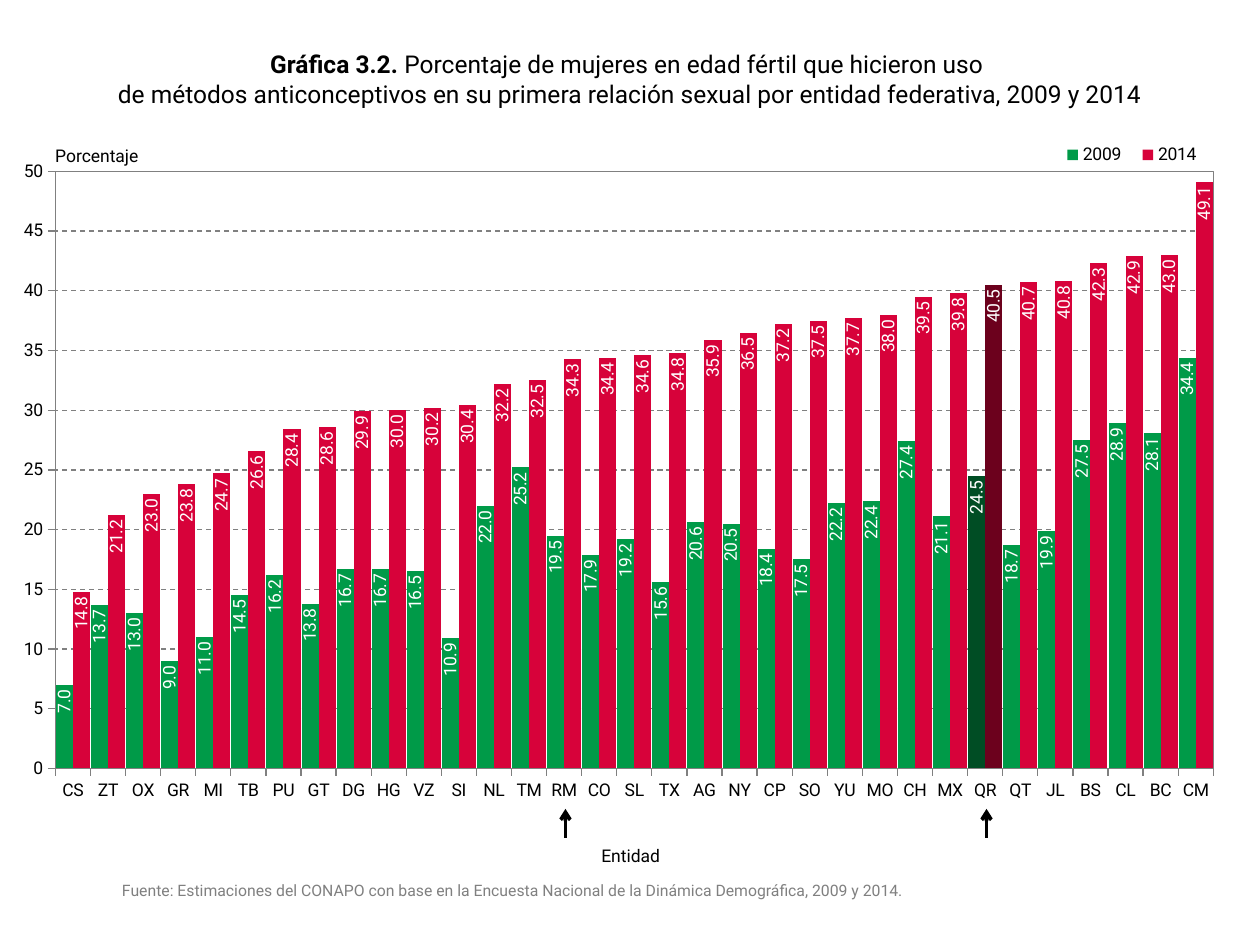
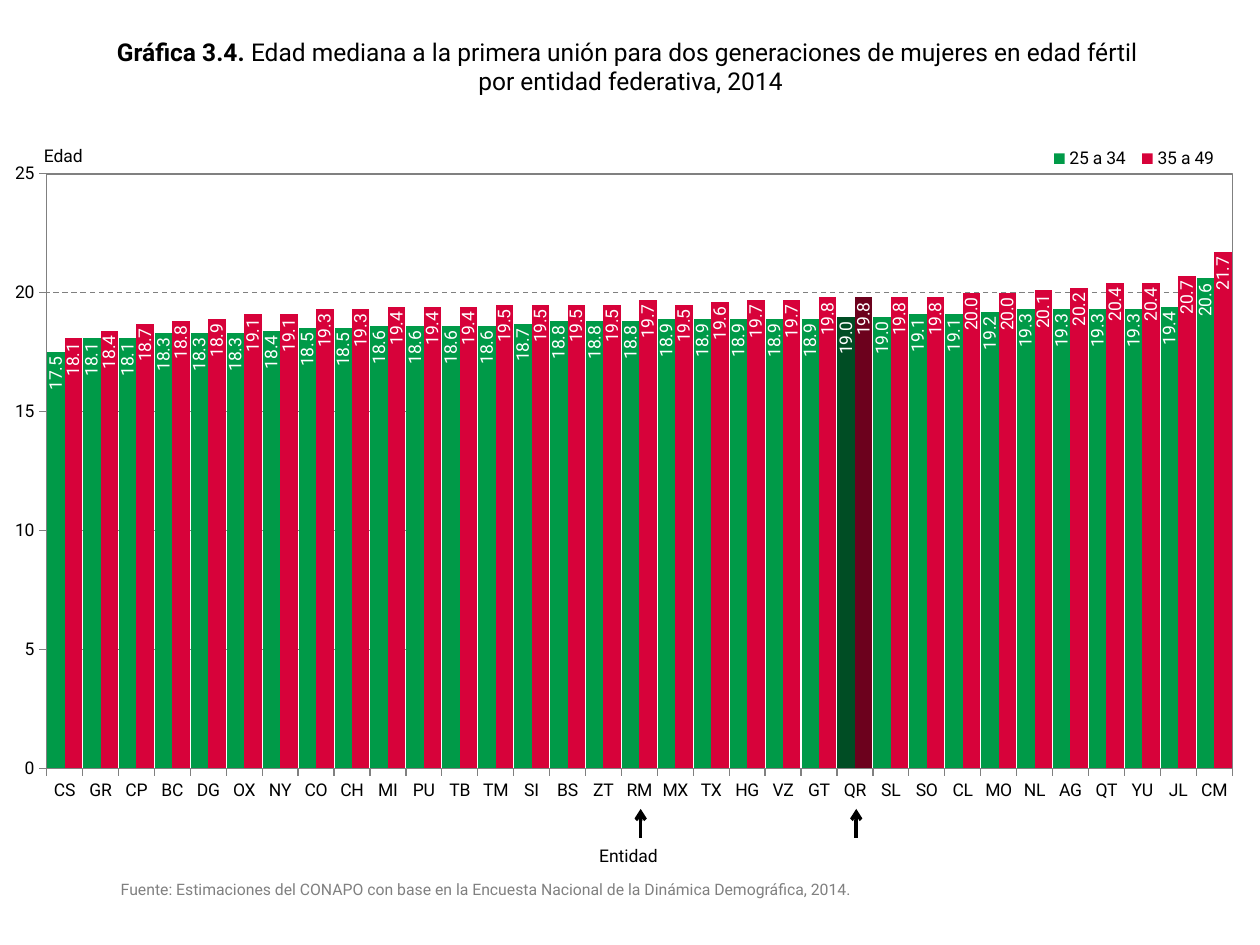
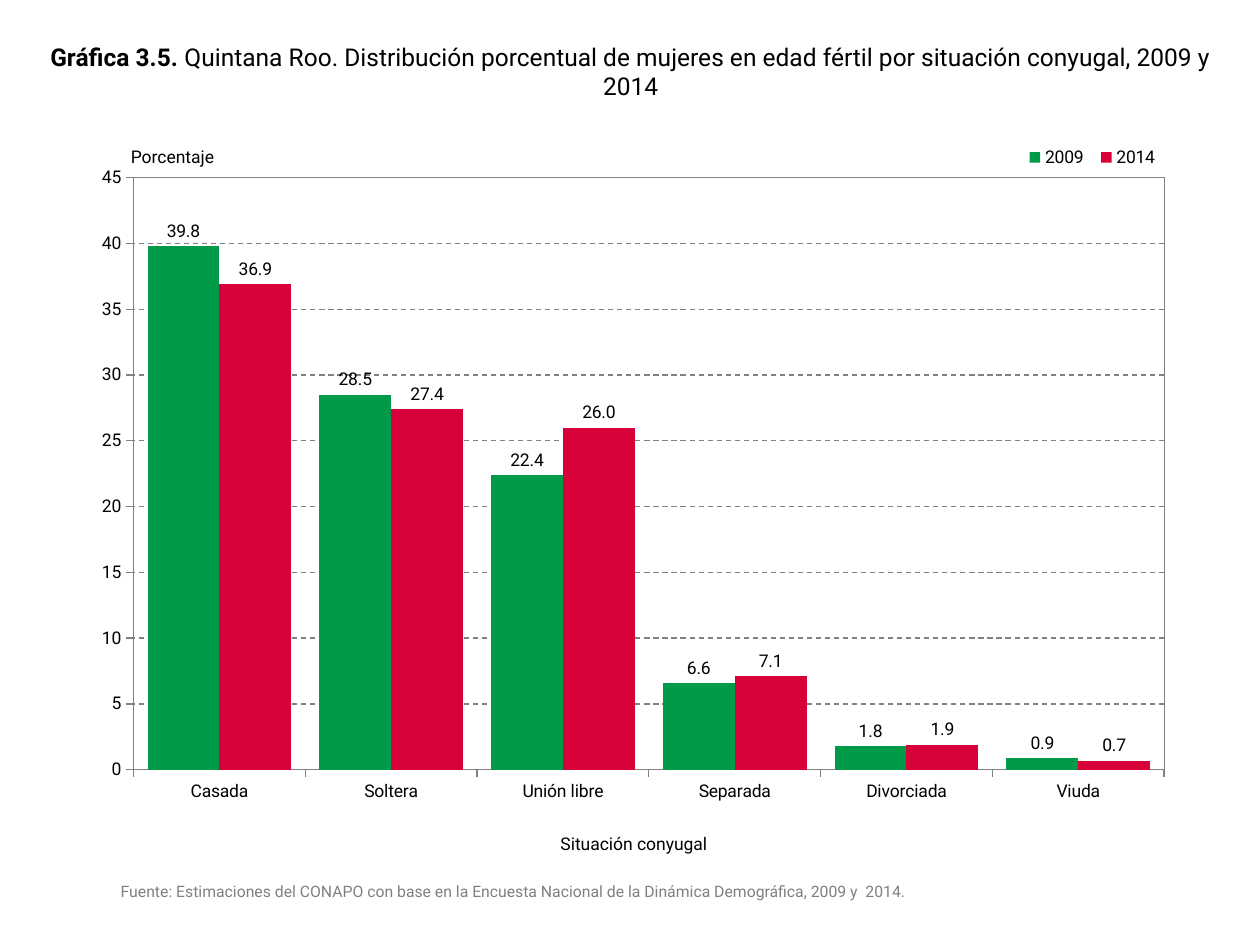
from dataclasses import dataclass

from lxml import etree
from pptx import Presentation
from pptx import util as u
from pptx.chart.data import CategoryChartData
from pptx.dml.color import RGBColor
from pptx.enum import chart as ch, dml, shapes, text as tx
from pptx.oxml.ns import qn

# Shared look
PX = 9144  # EMU per px, 100 px to the inch
FONT = "Roboto"
INK = {
    "black": "000000", "white": "FFFFFF", "gray": "808080",
    "green": "009A48", "red": "D7023A",
    "pine": "004D24", "wine": "6C011D",
}
BARS = (("green", "pine"), ("red", "wine"))
MARKED = ("RM", "QR")
DARK = "QR"


@dataclass(frozen=True)
class Box:
    left: int
    top: int
    width: int
    height: int

    def emu(self) -> tuple:
        return tuple(px(n) for n in (self.left, self.top, self.width, self.height))


@dataclass(frozen=True)
class Note:
    text: str
    box: Box
    size: int = 10
    color: str = "black"
    align: str = "LEFT"


@dataclass(frozen=True)
class Graph:
    box: Box
    plot: Box
    key: Box
    corner: bool
    peak: int
    gap: int
    upright: bool
    cats: list
    rows: dict


@dataclass(frozen=True)
class Page:
    head: str
    title: str
    place: Box
    graph: Graph
    notes: list


def px(n: float) -> int:
    return u.Emu(round(n * PX))


def rgb(name: str) -> RGBColor:
    return RGBColor.from_string(INK[name])


# Text
def style(font, size: int = 10, color: str = "black", bold: bool = False) -> None:
    font.name, font.size, font.bold = FONT, u.Pt(size), bold
    font.color.rgb = rgb(color)


def write(frame, text: str, head: str = "", size: int = 10,
          color: str = "black", align: str = "LEFT") -> None:
    frame.word_wrap = True
    para = frame.paragraphs[0]
    para.alignment = getattr(tx.PP_ALIGN, align)
    if head:
        run = para.add_run()
        run.text = head
        style(run.font, size, color, True)
    for i, line in enumerate(text.split("\n")):
        if i:
            para.add_line_break()
        run = para.add_run()
        run.text = line
        style(run.font, size, color)


def add_note(slide, note: Note) -> None:
    frame = slide.shapes.add_textbox(*note.box.emu()).text_frame
    write(frame, note.text, size=note.size, color=note.color, align=note.align)
    frame.auto_size = tx.MSO_AUTO_SIZE.SHAPE_TO_FIT_TEXT


def add_title(slide, page: Page) -> None:
    title = slide.shapes.title
    title.left, title.top, title.width, title.height = page.place.emu()
    frame = title.text_frame
    frame.auto_size = tx.MSO_AUTO_SIZE.NONE
    frame.vertical_anchor = tx.MSO_ANCHOR.MIDDLE
    write(frame, page.title, head=page.head, size=14, align="CENTER")


# Charts
def fix(node, at: int, part: Box, whole: Box, inner: bool = False) -> None:
    """Place a chart part by fractions of the whole chart."""
    for old in node.findall(qn("c:layout")):
        node.remove(old)
    layout = etree.Element(qn("c:layout"))
    manual = etree.SubElement(layout, qn("c:manualLayout"))
    vals = {"layoutTarget": "inner"} if inner else {}
    vals |= {
        "xMode": "edge", "yMode": "edge",
        "x": (part.left - whole.left) / whole.width,
        "y": (part.top - whole.top) / whole.height,
        "w": part.width / whole.width,
        "h": part.height / whole.height,
    }
    for tag, val in vals.items():
        etree.SubElement(manual, qn(f"c:{tag}")).set("val", str(val))
    node.insert(at, layout)


def rule(line, dash: bool = False) -> None:
    line.color.rgb = rgb("gray")
    line.width = u.Pt(0.75)
    if dash:
        line.dash_style = dml.MSO_LINE.DASH


def add_frame(area) -> None:
    props = etree.SubElement(area, qn("c:spPr"))
    etree.SubElement(props, qn("a:noFill"))
    line = etree.SubElement(props, qn("a:ln"), w=str(u.Pt(0.75)))
    fill = etree.SubElement(line, qn("a:solidFill"))
    etree.SubElement(fill, qn("a:srgbClr"), val=INK["gray"])


def paint(form, color: str) -> None:
    form.fill.solid()
    form.fill.fore_color.rgb = rgb(color)


def add_graph(slide, g: Graph) -> None:
    data = CategoryChartData(number_format="0.0")
    data.categories = g.cats
    for name, vals in g.rows.items():
        data.add_series(name, vals)
    chart = slide.shapes.add_chart(
        ch.XL_CHART_TYPE.COLUMN_CLUSTERED, *g.box.emu(), data).chart
    chart.has_title = False
    style(chart.font)

    # Axes and grid
    cat, val = chart.category_axis, chart.value_axis
    for axis in (cat, val):
        axis.major_tick_mark = ch.XL_TICK_MARK.OUTSIDE
        axis.minor_tick_mark = ch.XL_TICK_MARK.NONE
        rule(axis.format.line)
    val.minimum_scale, val.maximum_scale, val.major_unit = 0, g.peak, 5
    val.tick_labels.number_format = "0"
    val.tick_labels.number_format_is_linked = False
    rule(val.major_gridlines.format.line, dash=True)

    # Bars and their values
    plot = chart.plots[0]
    plot.gap_width, plot.overlap, plot.vary_by_categories = g.gap, 0, False
    spot = ch.XL_LABEL_POSITION
    for row, (color, dark) in zip(plot.series, BARS):
        row.invert_if_negative = False
        paint(row.format, color)
        if DARK in g.cats:
            paint(row.points[g.cats.index(DARK)].format, dark)
        labels = row.data_labels
        labels.show_value = True
        labels.number_format, labels.number_format_is_linked = "0.0", False
        labels.position = spot.INSIDE_END if g.upright else spot.OUTSIDE_END
        style(labels.font, color="white" if g.upright else "black")
    if g.upright:
        for body in chart.element.xpath(".//c:dLbls/c:txPr/a:bodyPr"):
            body.set("rot", "-5400000")
            body.set("vert", "horz")

    # Legend and plot area
    chart.has_legend = True
    side = ch.XL_LEGEND_POSITION
    chart.legend.position = side.CORNER if g.corner else side.BOTTOM
    chart.legend.include_in_layout = False
    style(chart.legend.font)
    area, = chart.element.xpath(".//c:plotArea")
    key, = chart.element.xpath(".//c:legend")
    fix(area, 0, g.plot, g.box, inner=True)
    fix(key, 1, g.key, g.box)
    add_frame(area)


def add_arrow(slide, x: float) -> None:
    arrow = slide.shapes.add_connector(
        shapes.MSO_CONNECTOR.STRAIGHT, px(x), px(665), px(x), px(642))
    arrow.line.color.rgb = rgb("black")
    arrow.line.width = u.Pt(2)
    props = arrow.element.spPr
    etree.SubElement(props.find(qn("a:ln")), qn("a:tailEnd"), type="arrow")
    etree.SubElement(props, qn("a:effectLst"))


def add_page(deck, page: Page) -> None:
    slide = deck.slides.add_slide(deck.slide_layouts[5])
    add_title(slide, page)
    g = page.graph
    add_graph(slide, g)
    for note in page.notes:
        add_note(slide, note)
    for name in MARKED:
        if name in g.cats:
            step = g.plot.width / len(g.cats)
            add_arrow(slide, g.plot.left + step * (g.cats.index(name) + 0.5) + 1)


# Content
SOURCE = ("Fuente: Estimaciones del CONAPO con base en la Encuesta Nacional "
          "de la Dinámica Demográfica, ")


def source(years: str, box: Box) -> Note:
    return Note(SOURCE + years, box, 9, "gray")


PAGES = [
    Page(
        "Gráfica 3.2. ",
        "Porcentaje de mujeres en edad fértil que hicieron uso \n"
        "de métodos anticonceptivos en su primera relación sexual "
        "por entidad federativa, 2009 y 2014",
        Box(51, 21, 898, 83),
        Graph(
            Box(1, 103, 979, 587), Box(44, 136, 919, 474), Box(835, 110, 127, 26),
            True, 50, 6, True,
            ("CS ZT OX GR MI TB PU GT DG HG VZ SI NL TM RM CO SL TX AG NY CP "
             "SO YU MO CH MX QR QT JL BS CL BC CM").split(),
            {"2009": [7, 13.7, 13, 9, 11, 14.5, 16.2, 13.8, 16.7, 16.7, 16.5,
                      10.9, 22, 25.2, 19.5, 17.9, 19.2, 15.6, 20.6, 20.5, 18.4,
                      17.5, 22.2, 22.4, 27.4, 21.1, 24.5, 18.7, 19.9, 27.5,
                      28.9, 28.1, 34.4],
             "2014": [14.8, 21.2, 23, 23.8, 24.7, 26.6, 28.4, 28.6, 29.9, 30,
                      30.2, 30.4, 32.2, 32.5, 34.3, 34.4, 34.6, 34.8, 35.9,
                      36.5, 37.2, 37.5, 37.7, 38, 39.5, 39.8, 40.5, 40.7, 40.8,
                      42.3, 42.9, 43, 49.1]}),
        [Note("Porcentaje", Box(34, 110, 126, 27)),
         Note("Entidad", Box(398, 666, 205, 27), align="CENTER"),
         source("2009 y 2014.", Box(87, 694, 866, 25))]),
    Page(
        "Gráfica 3.4. ",
        "Edad mediana a la primera unión para dos generaciones de mujeres "
        "en edad fértil \npor entidad federativa, 2014",
        Box(28, 21, 945, 63),
        Graph(
            Box(0, 95, 1000, 599), Box(37, 138, 941, 472), Box(828, 113, 144, 26),
            False, 25, 6, True,
            ("CS GR CP BC DG OX NY CO CH MI PU TB TM SI BS ZT RM MX TX HG VZ "
             "GT QR SL SO CL MO NL AG QT YU JL CM").split(),
            {"25 a 34": [17.5, 18.1, 18.1, 18.3, 18.3, 18.3, 18.4, 18.5, 18.5,
                         18.6, 18.6, 18.6, 18.6, 18.7, 18.8, 18.8, 18.8, 18.9,
                         18.9, 18.9, 18.9, 18.9, 19, 19, 19.1, 19.1, 19.2,
                         19.3, 19.3, 19.3, 19.3, 19.4, 20.6],
             "35 a 49": [18.1, 18.4, 18.7, 18.8, 18.9, 19.1, 19.1, 19.3, 19.3,
                         19.4, 19.4, 19.4, 19.5, 19.5, 19.5, 19.5, 19.7, 19.5,
                         19.6, 19.7, 19.7, 19.8, 19.8, 19.8, 19.8, 20, 20,
                         20.1, 20.2, 20.4, 20.4, 20.7, 21.7]}),
        [Note("Edad", Box(25, 110, 74, 27)),
         source("2014.", Box(86, 693, 825, 25)),
         Note("Entidad ", Box(398, 666, 205, 27), align="CENTER")]),
    Page(
        "Gráfica 3.5. ",
        "Quintana Roo. Distribución porcentual de mujeres en edad fértil "
        "por situación conyugal, 2009 y 2014",
        Box(28, 21, 945, 71),
        Graph(
            Box(59, 107, 882, 567), Box(106, 141, 818, 470), Box(808, 112, 118, 26),
            False, 45, 39, False,
            ["Casada", "Soltera", "Unión libre", "Separada", "Divorciada", "Viuda"],
            {"2009": [39.8, 28.5, 22.4, 6.6, 1.8, 0.9],
             "2014": [36.9, 27.4, 26, 7.1, 1.9, 0.7]}),
        [Note("Porcentaje", Box(94, 111, 189, 27)),
         source("2009 y  2014.", Box(86, 695, 756, 25)),
         Note("Situación conyugal", Box(359, 656, 288, 27), align="CENTER")]),
]


def main() -> None:
    deck = Presentation()
    deck.slide_width, deck.slide_height = px(1000), px(750)
    for page in PAGES:
        add_page(deck, page)
    deck.save("out.pptx")


if __name__ == "__main__":
    main()
